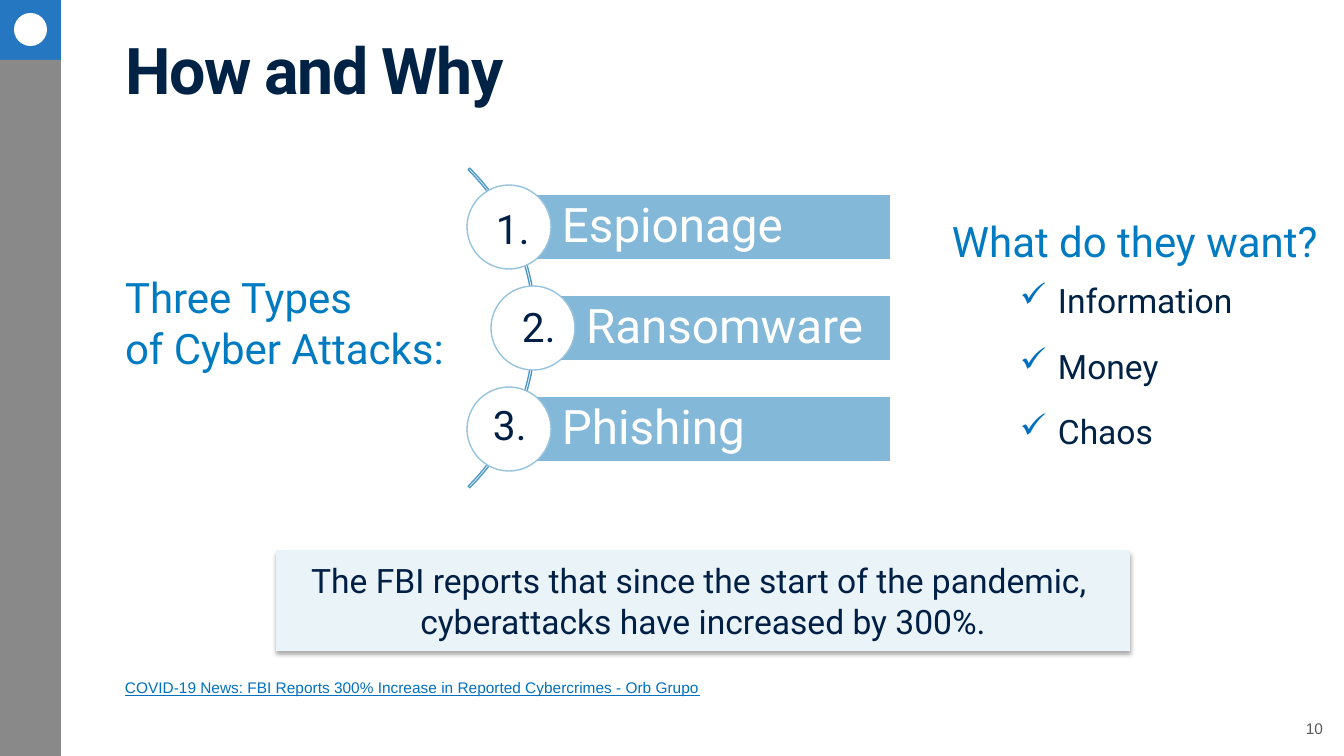
from lxml import etree
from pptx import Presentation, util as u
from pptx.dml.color import RGBColor
from pptx.enum import shapes, text
from pptx.oxml import ns

PX = 914400 / 100.8
NAVY = RGBColor(0x00, 0x22, 0x45)
INK = RGBColor(0x00, 0x1F, 0x45)
BLUE = RGBColor(0x00, 0x7B, 0xC1)
ACCENT = RGBColor(0x00, 0x70, 0xC0)
BADGE = RGBColor(0x26, 0x77, 0xC2)
GRAY = RGBColor(0x89, 0x89, 0x89)
NUMBER_GRAY = RGBColor(0x59, 0x59, 0x59)
BAR = RGBColor(0x84, 0xB8, 0xD8)
ARC = RGBColor(0x51, 0x9A, 0xC7)
RING = RGBColor(0x98, 0xC3, 0xDE)
PALE = RGBColor(0xEA, 0xF3, 0xF8)
WHITE = RGBColor(0xFF, 0xFF, 0xFF)

SHAPE = shapes.MSO_SHAPE
LEFT, CENTER = text.PP_ALIGN.LEFT, text.PP_ALIGN.CENTER
TOP, MIDDLE, BOTTOM = text.MSO_ANCHOR.TOP, text.MSO_ANCHOR.MIDDLE, text.MSO_ANCHOR.BOTTOM


def px(length):
    return u.Emu(round(length * PX))


def child(parent, tag, **attributes):
    return etree.SubElement(parent, ns.qn(tag), attributes)


class SlideBuilder:
    """Holds the text style and the current slide, and adds its elements."""

    font = "Roboto"

    def __init__(self, page):
        self.page = page

    def fill_text(self, box, lines, size, color, align=LEFT, anchor=MIDDLE,
                  inset=(0, 0, 0, 0), wrap=False, font=None, **style):
        frame = box.text_frame
        frame.word_wrap = wrap
        frame.auto_size = text.MSO_AUTO_SIZE.NONE
        frame.vertical_anchor = anchor
        frame.margin_left, frame.margin_top, frame.margin_right, frame.margin_bottom = map(px, inset)
        para = frame.paragraphs[0]
        para.alignment = align
        for index, line in enumerate(lines):
            if index:
                para.add_line_break()
            self.span(para, line, size, color, font, **style)
        return para

    def span(self, para, words, size, color, font=None, bold=False, underline=False):
        span = para.add_run()
        span.text = words
        span.font.name = font or self.font
        span.font.size = u.Pt(size)
        span.font.bold = bold
        span.font.underline = underline
        span.font.color.rgb = color
        return span

    def title(self, words, left, top, width, height):
        box = self.page.shapes.title
        box.left, box.top, box.width, box.height = map(px, (left, top, width, height))
        para = self.fill_text(box, [words], 46, NAVY, inset=(10, 5, 10, 5), wrap=True, bold=True)
        para.runs[0].font._element.set("spc", "-100")

    def shape(self, kind, left, top, width, height, fill=None, line=None):
        shape = self.page.shapes.add_shape(kind, *map(px, (left, top, width, height)))
        shape.shadow.inherit = False
        if fill is None:
            shape.fill.background()
        else:
            shape.fill.solid()
            shape.fill.fore_color.rgb = fill
        if line is None:
            shape.line.fill.background()
        else:
            shape.line.color.rgb = line
            shape.line.width = u.Pt(1)
        return shape

    def label(self, lines, left, top, width, height, size, color, **style):
        box = self.page.shapes.add_textbox(*map(px, (left, top, width, height)))
        self.fill_text(box, lines, size, color, **style)

    def arc(self, left, top, size):
        arc = self.shape(SHAPE.BLOCK_ARC, left, top, size, size, line=ARC)
        for index, value in enumerate((189, 27, 0.005)):
            arc.adjustments[index] = value

    def step(self, words, left, top, right):
        size, bar_height = 84, 66
        middle = left + size // 2
        bar = self.shape(SHAPE.RECTANGLE, middle, top + 9, right - middle, bar_height, BAR, WHITE)
        para = self.fill_text(bar, [words], 34, WHITE, inset=(53, 9, 9, 9), wrap=True)
        para.line_spacing = 0.9
        self.shape(SHAPE.OVAL, left, top, size, size, WHITE, RING)

    def checklist(self, items, left, top, width, height):
        box = self.page.shapes.add_textbox(*map(px, (left, top, width, height)))
        frame = box.text_frame
        frame.word_wrap = True
        indent = px(38)
        for index, item in enumerate(items):
            para = frame.add_paragraph() if index else frame.paragraphs[0]
            para.space_before = u.Pt(18)
            self.span(para, item, 24, NAVY)
            properties = para._p.get_or_add_pPr()
            properties.set("marL", str(indent))
            properties.set("indent", str(-indent))
            child(child(properties, "a:buClr"), "a:srgbClr", val=str(ACCENT))
            child(properties, "a:buChar", char="✓")

    def callout(self, lines, left, top, width, height):
        box = self.shape(SHAPE.RECTANGLE, left, top, width, height, PALE)
        effects = box._element.spPr.find(ns.qn("a:effectLst"))
        shadow = child(effects, "a:outerShdw", blurRad=str(u.Pt(3.5)), dist=str(u.Pt(2.2)),
                       dir="5400000", algn="t", rotWithShape="0")
        child(child(shadow, "a:srgbClr", val="000000"), "a:alpha", val="32000")
        self.fill_text(box, lines, 24, INK, align=CENTER)


def main():
    deck = Presentation()
    deck.slide_width, deck.slide_height = px(1344), px(756)
    page = deck.slides.add_slide(deck.slide_layouts[5])
    slide = SlideBuilder(page)

    slide.shape(SHAPE.RECTANGLE, 0, 0, 61, 61, BADGE)
    slide.shape(SHAPE.RECTANGLE, 0, 60, 61, 696, GRAY)
    slide.shape(SHAPE.OVAL, 14, 13, 33, 33, WHITE)
    slide.title("How and Why", 115, 26, 1179, 85)

    slide.arc(84, 102, 452)
    steps = (("Espionage", 467, 496, 201), ("Ransomware", 491, 522, 299), ("Phishing", 467, 493, 397))
    for index, (words, left, number_left, number_top) in enumerate(steps):
        slide.step(words, left, 185 + 101 * index, 891)
        slide.label([f"{index + 1}."], number_left, number_top, 58, 52, 29, INK,
                    anchor=BOTTOM, wrap=True)

    slide.label(["Three Types", "of Cyber Attacks:"], 125, 265, 313, 114, 30, BLUE)
    slide.label(["What do they want?"], 952, 184, 313, 114, 30, BLUE)
    slide.checklist(("Information", "Money", "Chaos"), 1010, 275, 241, 313)

    slide.callout(["The FBI reports that since the start of the pandemic, ",
                   "cyberattacks have increased by 300%."], 276, 550, 854, 101)
    slide.label(["COVID-19 News: FBI Reports 300% Increase in Reported Cybercrimes - Orb Grupo"],
                125, 676, 983, 21, 11, ACCENT, anchor=BOTTOM, font="Arial", underline=True)
    slide.label(["10"], 1286, 714, 57, 40, 11, NUMBER_GRAY, align=CENTER, anchor=TOP,
                inset=(10, 5, 10, 5), wrap=True, font="Arial")

    deck.save("out.pptx")


if __name__ == "__main__":
    main()
